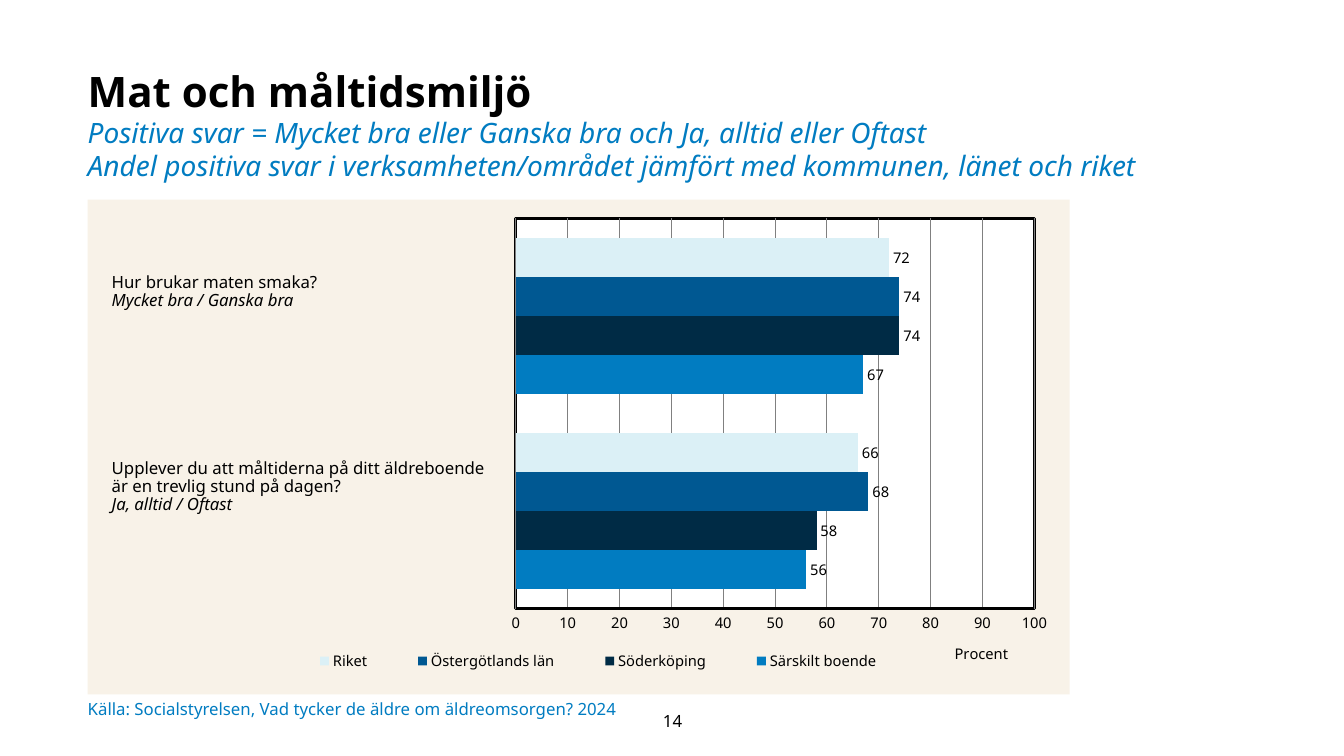
from lxml import etree
from pptx import Presentation
from pptx.chart.data import CategoryChartData
from pptx.dml.color import RGBColor
from pptx.enum.chart import XL_CHART_TYPE, XL_LABEL_POSITION, XL_LEGEND_POSITION, XL_TICK_MARK
from pptx.enum.text import MSO_ANCHOR, PP_ALIGN
from pptx.oxml import parse_xml
from pptx.oxml.ns import nsdecls, qn
from pptx.util import Inches, Pt

TOP, MIDDLE = MSO_ANCHOR.TOP, MSO_ANCHOR.MIDDLE
LEFT, CENTER = PP_ALIGN.LEFT, PP_ALIGN.CENTER
BAR = XL_CHART_TYPE.BAR_CLUSTERED
OUTSIDE_END = XL_LABEL_POSITION.OUTSIDE_END
BOTTOM = XL_LEGEND_POSITION.BOTTOM
NO_TICK = XL_TICK_MARK.NONE

# Content
FONT = "Noto Sans"
BLACK, BLUE, CREAM, WHITE, GREY = "000000", "017CC1", "F8F2E8", "FFFFFF", "808080"
HEADING = {"size": 30, "bold": True}
SUBHEADING = {"size": 20, "italic": True, "color": BLUE}
PLAIN = {"size": 12}
ANSWER = {"size": 12, "italic": True}
SOURCE = {"size": 12, "color": BLUE}

TITLE = [
    ("Mat och måltidsmiljö", HEADING),
    ("Positiva svar = Mycket bra eller Ganska bra och Ja, alltid eller Oftast", SUBHEADING),
    ("Andel positiva svar i verksamheten/området jämfört med kommunen, länet och riket", SUBHEADING),
]
TASTE = [("Hur brukar maten smaka?", PLAIN), ("Mycket bra / Ganska bra", ANSWER)]
MEALS = [
    ("Upplever du att måltiderna på ditt äldreboende", PLAIN),
    ("är en trevlig stund på dagen?", PLAIN),
    ("Ja, alltid / Oftast", ANSWER),
]
CREDIT = [("Källa: Socialstyrelsen, Vad tycker de äldre om äldreomsorgen? 2024", SOURCE)]
NUMBER = [("14", PLAIN)]

# Lines, position, margins, anchor, alignment, line spacing
USUAL, NONE = (0.1, 0.05, 0.1, 0.05), (0, 0, 0, 0)
TEXTS = [
    (TITLE, (0.87, 0.68, 11.6, 1.3), NONE, TOP, LEFT, 0.97),
    (TASTE, (1.01, 2.67, 2.56, 0.68), USUAL, TOP, LEFT, 0.9),
    (MEALS, (1.01, 4.51, 4.47, 0.88), USUAL, TOP, LEFT, 0.9),
    (CREDIT, (0.87, 6.89, 8.99, 0.29), NONE, MIDDLE, LEFT, 1),
    (NUMBER, (6.16, 6.95, 1.02, 0.4), USUAL, MIDDLE, CENTER, 1),
]

CATEGORIES = ["1", "2"]
SERIES = [
    ("Särskilt boende", (56, 67), BLUE),
    ("Söderköping", (58, 74), "002B45"),
    ("Östergötlands län", (68, 74), "005892"),
    ("Riket", (66, 72), "DBF0F6"),
]
CHART_BOX = (0.87, 1.98, 9.74, 4.91)
# Shares of the chart's width and height
PLOT_LAYOUT = {"x": 0.436, "y": 0.038, "w": 0.528, "h": 0.789}
LEGEND_LAYOUT = {"x": 0.19, "y": 0.9, "w": 0.66, "h": 0.065}
AXIS_TITLE_LAYOUT = {"x": 0.88, "y": 0.888}


def rgb(value):
    return RGBColor.from_string(value)


def style(font, size, color=BLACK, **flags):
    for name, value in {"name": FONT, "size": Pt(size), "bold": False, **flags}.items():
        setattr(font, name, value)
    font.color.rgb = rgb(color)


def add_text(page, lines, place, margins, anchor, align, spacing):
    frame = page.shapes.add_textbox(*map(Inches, place)).text_frame
    frame.word_wrap = True
    frame.vertical_anchor = anchor
    for side, margin in zip(("left", "top", "right", "bottom"), margins):
        setattr(frame, f"margin_{side}", Inches(margin))
    for index, (words, look) in enumerate(lines):
        para = frame.add_paragraph() if index else frame.paragraphs[0]
        para.alignment, para.line_spacing = align, spacing
        span = para.add_run()
        span.text = words
        style(span.font, **look)


def place_part(parent, shares, before, inner=False):
    """Give a chart part a fixed layout, ahead of the named sibling elements."""
    for old in parent.findall(qn("c:layout")):
        parent.remove(old)
    layout = etree.Element(qn("c:layout"))
    manual = etree.SubElement(layout, qn("c:manualLayout"))
    settings = [("layoutTarget", "inner")] if inner else []
    settings += [("xMode", "edge"), ("yMode", "edge"), *shares.items()]
    for name, value in settings:
        etree.SubElement(manual, qn(f"c:{name}")).set("val", str(value))
    following = next(child for child in parent if child.tag in map(qn, before))
    following.addprevious(layout)


def area_format(fill, line):
    return parse_xml(
        f'<c:spPr {nsdecls("c", "a")}><a:solidFill><a:srgbClr val="{fill}"/></a:solidFill>'
        f"{line}</c:spPr>")


def add_bars(page):
    data = CategoryChartData()
    data.categories = CATEGORIES
    for name, values, _ in SERIES:
        data.add_series(name, values)
    chart = page.shapes.add_chart(BAR, *map(Inches, CHART_BOX), data).chart
    style(chart.font, 10.5)
    chart.has_title = False

    # Bars and their labels
    plot = chart.plots[0]
    plot.gap_width, plot.overlap, plot.vary_by_categories = 100, 0, False
    for series, (_, _, color) in zip(plot.series, SERIES):
        series.format.fill.solid()
        series.format.fill.fore_color.rgb = rgb(color)
        labels = series.data_labels
        labels.show_value, labels.position = True, OUTSIDE_END
        style(labels.font, 10.5)

    # Axes
    chart.category_axis.visible = False
    axis = chart.value_axis
    for name, value in {"minimum_scale": 0, "maximum_scale": 100, "major_unit": 10,
                        "major_tick_mark": NO_TICK, "minor_tick_mark": NO_TICK}.items():
        setattr(axis, name, value)
    for line, color, width in ((axis.format.line, BLACK, 2),
                               (axis.major_gridlines.format.line, GREY, 0.75)):
        line.color.rgb, line.width = rgb(color), Pt(width)
    title = axis.axis_title
    title.text_frame.text = "Procent"
    style(title.text_frame.paragraphs[0].runs[0].font, 10.5)
    place_part(title._element, AXIS_TITLE_LAYOUT, ["c:overlay", "c:spPr", "c:txPr"])

    # Legend
    chart.has_legend = True
    legend = chart.legend
    legend.position, legend.include_in_layout = BOTTOM, False
    style(legend.font, 10.5)
    place_part(legend._element, LEGEND_LAYOUT, ["c:overlay"])

    # Plot and chart backgrounds
    space = chart._chartSpace
    plot_area = space.chart.plotArea
    place_part(plot_area, PLOT_LAYOUT, ["c:barChart"], inner=True)
    border = f'<a:ln w="{Pt(2)}"><a:solidFill><a:srgbClr val="{BLACK}"/></a:solidFill></a:ln>'
    plot_area.append(area_format(WHITE, border))
    space.chart.addnext(area_format(CREAM, "<a:ln><a:noFill/></a:ln>"))


deck = Presentation()
deck.slide_width, deck.slide_height = Inches(13.33), Inches(7.5)
page = deck.slides.add_slide(deck.slide_layouts[6])
add_bars(page)
for text in TEXTS:
    add_text(page, *text)
deck.save("out.pptx")
